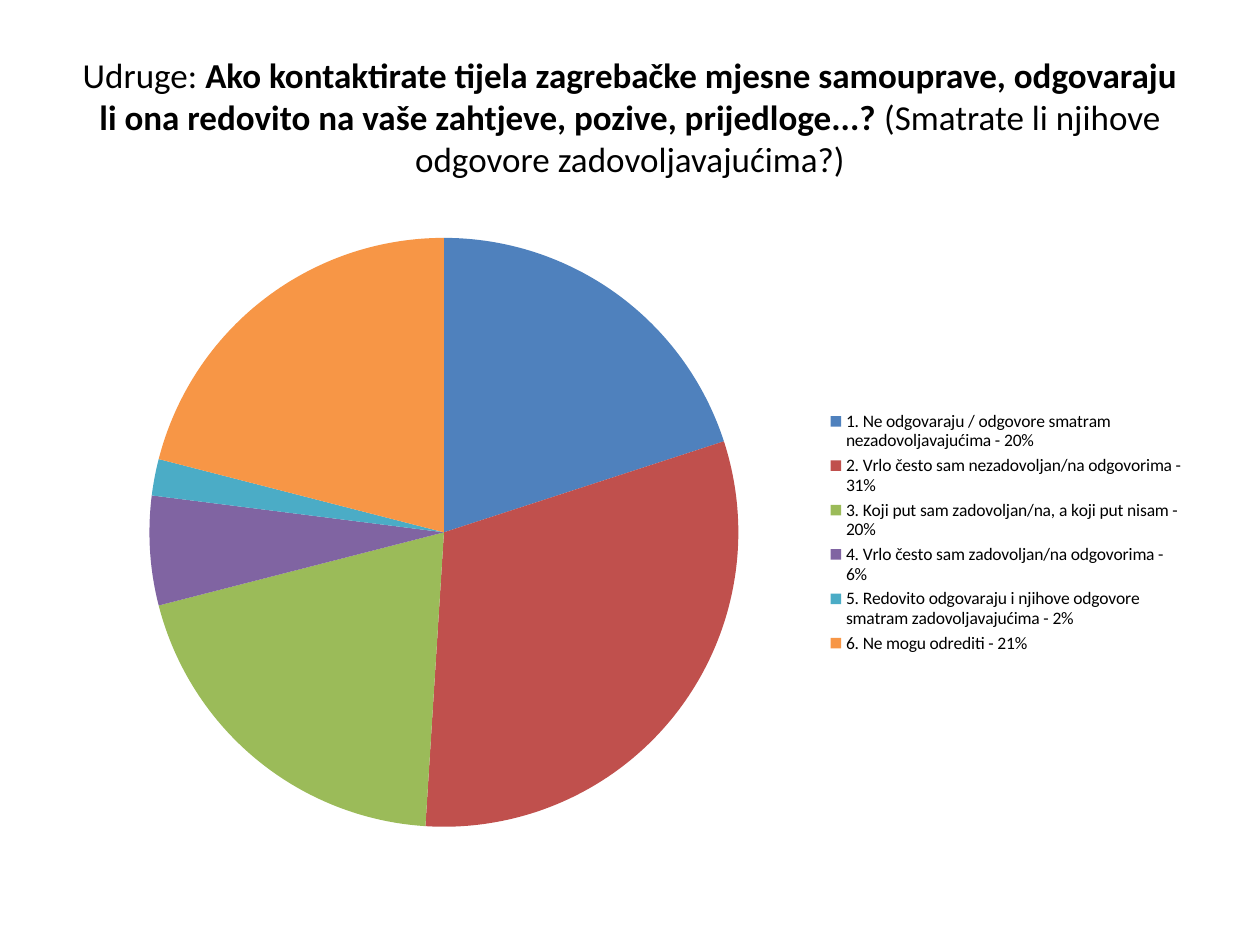
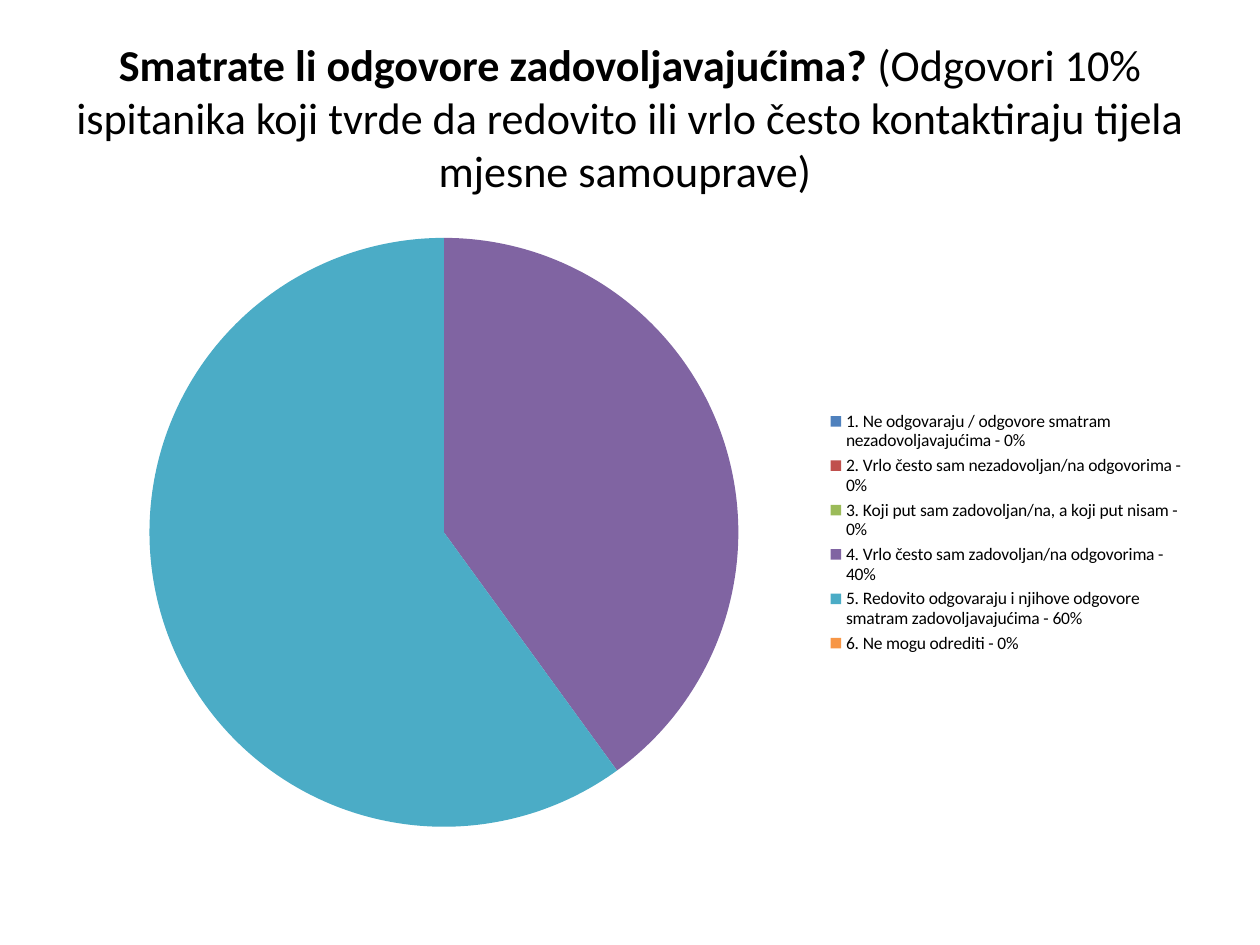
from pptx import Presentation
from pptx.chart.data import CategoryChartData
from pptx.dml.color import RGBColor
from pptx.enum.chart import XL_CHART_TYPE, XL_LEGEND_POSITION
from pptx.enum.text import MSO_ANCHOR, PP_ALIGN
from pptx.util import Inches, Pt

FONT = "Calibri"
COLORS = {
    "text": "000000",
    "background": "FFFFFF",
    "blue": "4F81BD",
    "red": "C0504D",
    "green": "9BBB59",
    "purple": "8064A2",
    "teal": "4BACC6",
    "orange": "F79646",
}
SLICE_COLORS = ("blue", "red", "green", "purple", "teal", "orange")
TITLE_BOX = (0.5, 0.3, 9, 1.25)
CHART_BOX = (0.5, 1.75, 9, 4.95)
ANSWERS = (
    "Ne odgovaraju / odgovore smatram nezadovoljavajućima",
    "Vrlo često sam nezadovoljan/na odgovorima",
    "Koji put sam zadovoljan/na, a koji put nisam",
    "Vrlo često sam zadovoljan/na odgovorima",
    "Redovito odgovaraju i njihove odgovore smatram zadovoljavajućima",
    "Ne mogu odrediti",
)
SURVEYS = (
    {
        "title": (
            ("Udruge: ", False),
            ("Ako kontaktirate tijela zagrebačke mjesne samouprave, odgovaraju "
             "li ona redovito na vaše zahtjeve, pozive, prijedloge...? ", True),
            ("(Smatrate li njihove odgovore zadovoljavajućima?)", False),
        ),
        "title_size": 20,
        "percentages": (20, 31, 20, 6, 2, 21),
    },
    {
        "title": (
            ("Smatrate li odgovore zadovoljavajućima? ", True),
            ("(Odgovori 10% ispitanika koji tvrde da redovito ili vrlo često "
             "kontaktiraju tijela mjesne samouprave) ", False),
        ),
        "title_size": 25.2,
        "percentages": (0, 0, 0, 40, 60, 0),
    },
)


def color(name):
    """Return the palette colour with the given name."""
    return RGBColor.from_string(COLORS[name])


def style_font(font, size, bold=False):
    """Apply the shared typeface and text colour to a font."""
    font.name = FONT
    font.size = Pt(size)
    font.bold = bold
    font.color.rgb = color("text")


def add_text(slide, runs, box, size, align=PP_ALIGN.CENTER, anchor=MSO_ANCHOR.MIDDLE):
    """Add a text box whose runs are (text, bold) pairs."""
    frame = slide.shapes.add_textbox(*map(Inches, box)).text_frame
    frame.word_wrap = True
    frame.vertical_anchor = anchor
    paragraph = frame.paragraphs[0]
    paragraph.alignment = align
    for text, bold in runs:
        run = paragraph.add_run()
        run.text = text
        style_font(run.font, size, bold)


def add_answer_pie(slide, percentages, box):
    """Add a pie of the answers with its legend on the right."""
    data = CategoryChartData()
    data.categories = [
        f"{number}. {answer} - {percentage}%"
        for number, (answer, percentage) in enumerate(zip(ANSWERS, percentages), 1)
    ]
    data.add_series("Series 1", percentages)
    chart = slide.shapes.add_chart(XL_CHART_TYPE.PIE, *map(Inches, box), data).chart
    chart.has_title = False
    style_font(chart.font, 10)
    chart.has_legend = True
    chart.legend.position = XL_LEGEND_POSITION.RIGHT
    chart.legend.include_in_layout = False
    plot = chart.plots[0]
    plot.vary_by_categories = True
    for index, name in enumerate(SLICE_COLORS):
        fill = plot.series[0].points[index].format.fill
        fill.solid()
        fill.fore_color.rgb = color(name)


def add_survey_slide(presentation, survey):
    """Add a slide with a survey question and its answers."""
    slide = presentation.slides.add_slide(presentation.slide_layouts[6])
    slide.background.fill.solid()
    slide.background.fill.fore_color.rgb = color("background")
    add_text(slide, survey["title"], TITLE_BOX, survey["title_size"])
    add_answer_pie(slide, survey["percentages"], CHART_BOX)


def main():
    """Build and save the presentation."""
    presentation = Presentation()
    presentation.slide_width = Inches(10)
    presentation.slide_height = Inches(7.5)
    for survey in SURVEYS:
        add_survey_slide(presentation, survey)
    presentation.save("out.pptx")


if __name__ == "__main__":
    main()
